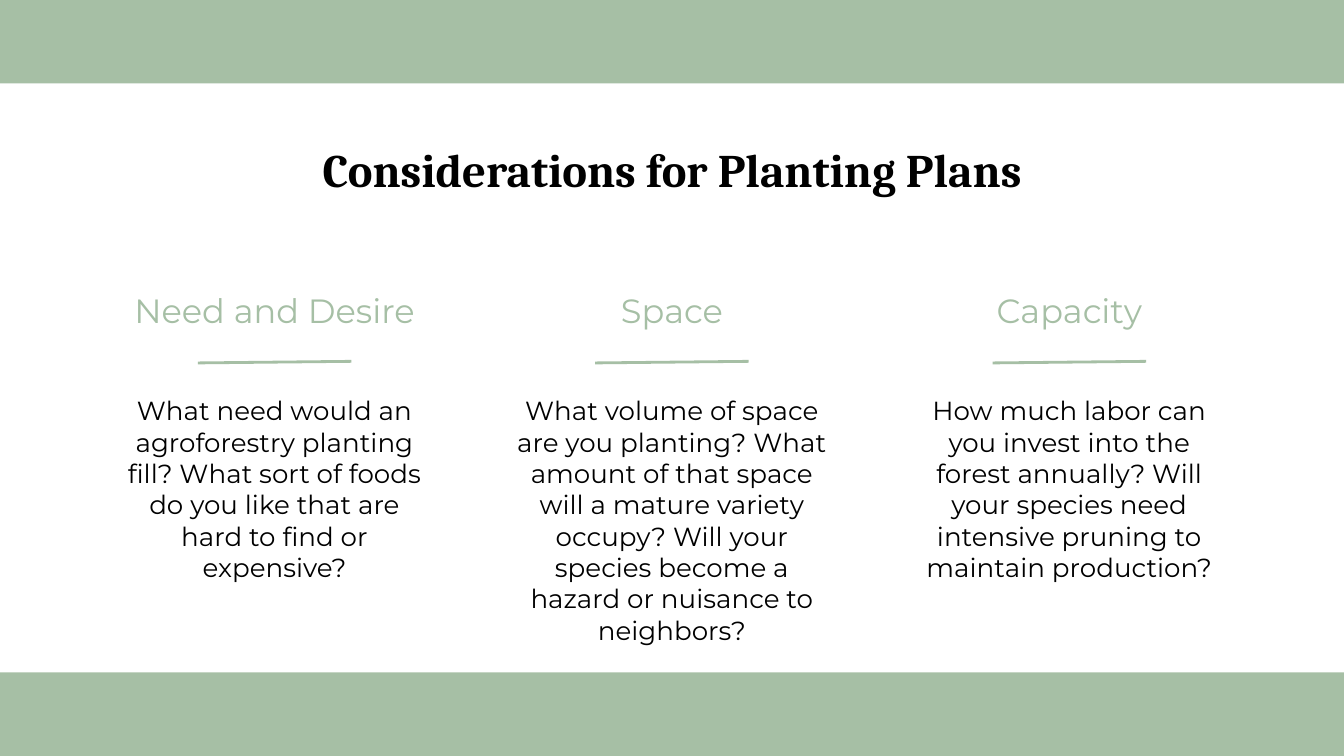
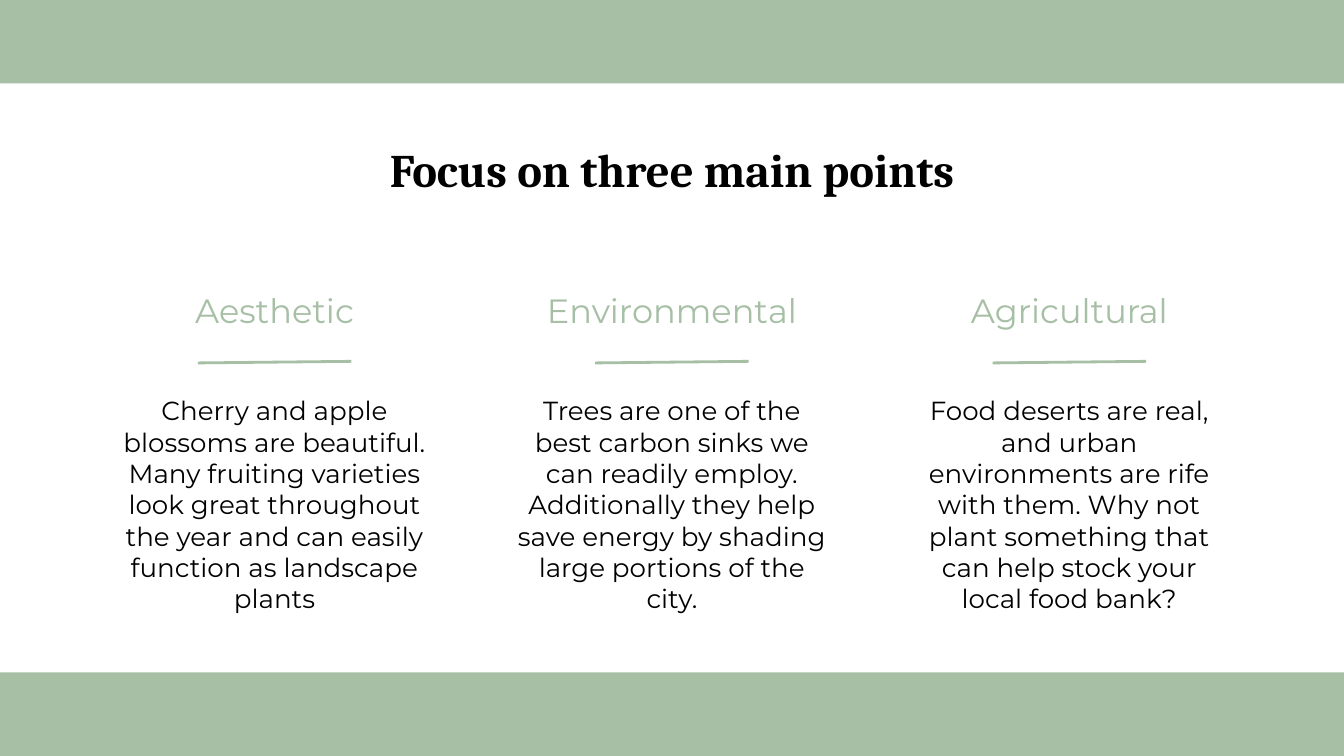
from pptx import Presentation
from pptx.dml.color import RGBColor
from pptx.enum.shapes import MSO_CONNECTOR, MSO_SHAPE
from pptx.enum.text import MSO_ANCHOR, MSO_AUTO_SIZE, PP_ALIGN
from pptx.oxml.ns import qn
from pptx.util import Cm, Pt
from lxml.etree import SubElement

SLIDES = [
    ("Considerations for Planting Plans", [
        ("Need and Desire",
         "What need would an agroforestry planting fill? What sort of foods "
         "do you like that are hard to find or expensive?"),
        ("Space",
         "What volume of space are you planting? What amount of that space "
         "will a mature variety occupy? Will your species become a hazard "
         "or nuisance to neighbors?"),
        ("Capacity",
         "How much labor can you invest into the forest annually? Will your "
         "species need intensive pruning to maintain production?"),
    ]),
    ("Focus on three main points", [
        ("Aesthetic",
         "Cherry and apple blossoms are beautiful. Many fruiting varieties "
         "look great throughout the year and can easily function as "
         "landscape plants"),
        ("Environmental",
         "Trees are one of the best carbon sinks we can readily employ. "
         "Additionally they help save energy by shading large portions of "
         "the city."),
        ("Agricultural",
         "Food deserts are real, and urban environments are rife with them. "
         "Why not plant something that can help stock your local food bank?"),
    ]),
]

SAGE, BLACK = "A6BFA5", "000000"
TITLE_FONT, BODY_FONT = "Cambria", "Montserrat"

# Lengths in centimetres
SLIDE_WIDTH, SLIDE_HEIGHT = 25.4, 14.29
BAND_HEIGHT = 1.58
MARGIN, COLUMN_GAP = 1.98, 1.09
CONTENT_WIDTH = SLIDE_WIDTH - 2 * MARGIN
TITLE_TOP, TITLE_HEIGHT = 2.41, 1.52
HEADING_TOP, HEADING_HEIGHT = 5.05, 1.45
BODY_TOP, BODY_HEIGHT = 7.21, 3.84
RULE_WIDTH, RULE_START_Y, RULE_END_Y = 2.9, 6.86, 6.83


def color(hex_text):
    return RGBColor.from_string(hex_text)


def place(shape, left, top, width, height):
    shape.left, shape.top = Cm(left), Cm(top)
    shape.width, shape.height = Cm(width), Cm(height)


def write(shape, text, *, size, font=BODY_FONT, fill=BLACK, bold=False,
          anchor=MSO_ANCHOR.TOP):
    frame = shape.text_frame
    frame.word_wrap = True
    frame.auto_size = MSO_AUTO_SIZE.NONE
    frame.vertical_anchor = anchor
    frame.margin_left = frame.margin_right = Cm(0.25)
    frame.margin_top = frame.margin_bottom = Cm(0.25)
    paragraph = frame.paragraphs[0]
    paragraph.alignment = PP_ALIGN.CENTER
    run = paragraph.add_run()
    run.text = text
    run.font.name, run.font.size, run.font.bold = font, Pt(size), bold
    run.font.color.rgb = color(fill)


def add_text(slide, text, left, top, width, height, **text_format):
    box = slide.shapes.add_textbox(Cm(left), Cm(top), Cm(width), Cm(height))
    write(box, text, **text_format)


def add_band(slide, top):
    band = slide.shapes.add_shape(
        MSO_SHAPE.RECTANGLE, 0, Cm(top), Cm(SLIDE_WIDTH), Cm(BAND_HEIGHT))
    band.shadow.inherit = False
    band.fill.solid()
    band.fill.fore_color.rgb = color(SAGE)
    band.line.fill.background()


def add_rule(slide, center):
    rule = slide.shapes.add_connector(
        MSO_CONNECTOR.STRAIGHT,
        Cm(center - RULE_WIDTH / 2), Cm(RULE_START_Y),
        Cm(center + RULE_WIDTH / 2), Cm(RULE_END_Y))
    rule.line.color.rgb = color(SAGE)
    rule.line.width = Pt(1.5)
    SubElement(rule._element.spPr, qn("a:effectLst"))


def add_columns(slide, columns):
    gaps = COLUMN_GAP * (len(columns) - 1)
    width = (CONTENT_WIDTH - gaps) / len(columns)
    for index, (heading, body) in enumerate(columns):
        left = MARGIN + index * (width + COLUMN_GAP)
        add_text(slide, heading, left, HEADING_TOP, width, HEADING_HEIGHT,
                 size=18, fill=SAGE, anchor=MSO_ANCHOR.BOTTOM)
        add_rule(slide, left + width / 2)
        add_text(slide, body, left, BODY_TOP, width, BODY_HEIGHT, size=14)


def add_slide(presentation, title, columns):
    title_only = presentation.slide_layouts[5]
    slide = presentation.slides.add_slide(title_only)
    for top in (0, SLIDE_HEIGHT - BAND_HEIGHT):
        add_band(slide, top)
    heading = slide.shapes.title
    place(heading, MARGIN, TITLE_TOP, CONTENT_WIDTH, TITLE_HEIGHT)
    write(heading, title, size=25, font=TITLE_FONT, bold=True)
    add_columns(slide, columns)


def main():
    presentation = Presentation()
    presentation.slide_width = Cm(SLIDE_WIDTH)
    presentation.slide_height = Cm(SLIDE_HEIGHT)
    for title, columns in SLIDES:
        add_slide(presentation, title, columns)
    presentation.save("out.pptx")


if __name__ == "__main__":
    main()
